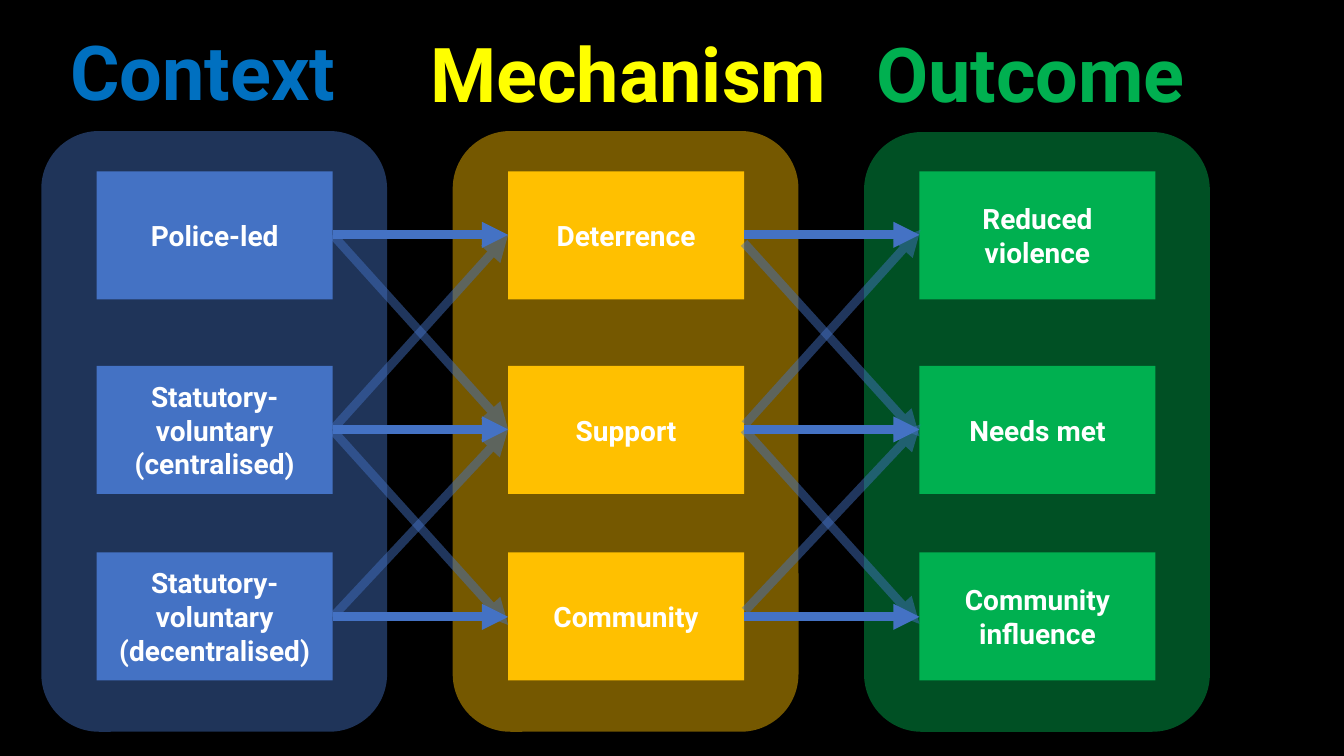
from lxml.etree import SubElement
from pptx import Presentation
from pptx.dml.color import RGBColor
from pptx.enum.shapes import MSO_CONNECTOR, MSO_SHAPE
from pptx.enum.text import MSO_ANCHOR, MSO_AUTO_SIZE, PP_ALIGN
from pptx.oxml.ns import qn
from pptx.util import Inches, Pt

COLOURS = {
    "background": "000000",
    "blue": "4472C4",
    "amber": "FFC000",
    "green": "00B050",
    "heading blue": "0070C0",
    "heading yellow": "FFFF00",
    "white": "FFFFFF",
}


class DiagramPage:
    font = "Roboto"
    line_width = Pt(6.25)

    def __init__(self, deck):
        self.page = deck.slides.add_slide(deck.slide_layouts[6])
        self.paint(self.page.background.fill, "background")

    def paint(self, fill, colour, opacity=100):
        fill.solid()
        fill.fore_color.rgb = RGBColor.from_string(COLOURS[colour])
        if opacity < 100:
            solid = fill._xPr.find(qn("a:solidFill"))
            SubElement(solid[0], qn("a:alpha"), val=str(opacity * 1000))

    def add_span(self, paragraph, text, size, colour):
        span = paragraph.add_run()
        span.text = text
        span.font.name = self.font
        span.font.size = Pt(size)
        span.font.bold = True
        span.font.color.rgb = RGBColor.from_string(COLOURS[colour])

    def shape(self, kind, left, top, width, height, colour, opacity=100):
        shape = self.page.shapes.add_shape(
            kind, Inches(left), Inches(top), Inches(width), Inches(height))
        shape.shadow.inherit = False
        shape.line.fill.background()
        self.paint(shape.fill, colour, opacity)
        return shape

    def panel(self, left, top, width, height, colour):
        self.shape(MSO_SHAPE.ROUNDED_RECTANGLE, left, top, width, height, colour, 46)

    def box(self, left, top, width, height, colour, text):
        frame = self.shape(MSO_SHAPE.RECTANGLE, left, top, width, height, colour).text_frame
        frame.word_wrap = True
        frame.vertical_anchor = MSO_ANCHOR.MIDDLE
        frame.paragraphs[0].alignment = PP_ALIGN.CENTER
        self.add_span(frame.paragraphs[0], text, 20, "white")

    def arrow(self, start, end, opacity=100):
        arrow = self.page.shapes.add_connector(
            MSO_CONNECTOR.STRAIGHT, *map(Inches, start + end))
        arrow.line.width = self.line_width
        self.paint(arrow.line.fill, "blue", opacity)
        SubElement(arrow.line._get_or_add_ln(), qn("a:tailEnd"), type="triangle")
        SubElement(arrow._element.spPr, qn("a:effectLst"))

    def heading(self, left, top, width, text, colour):
        box = self.page.shapes.add_textbox(
            Inches(left), Inches(top), Inches(width), Inches(1.01))
        box.text_frame.word_wrap = False
        box.text_frame.auto_size = MSO_AUTO_SIZE.SHAPE_TO_FIT_TEXT
        self.add_span(box.text_frame.paragraphs[0], text, 54, colour)


# Grid: three columns of three boxes
BOX_WIDTH, BOX_HEIGHT = 2.34, 1.27
COLUMN_LEFTS = [0.96 + 4.08 * column for column in range(3)]
ROW_TOPS = [1.7, 3.63, 5.48]
ROW_MIDDLES = [2.33, 4.26, 6.12]
PANEL_MARGIN = 0.55

# Box colour, labels, panel top and height, heading
COLUMNS = [
    ("blue", ["Police-led", "Statutory-voluntary (centralised)",
              "Statutory-voluntary (decentralised)"],
     (1.3, 5.96), (0.6, 0.2, 2.93, "Context", "heading blue")),
    ("amber", ["Deterrence", "Support", "Community"],
     (1.3, 5.96), (4.17, 0.22, 4.22, "Mechanism", "heading yellow")),
    ("green", ["Reduced violence", "Needs met", "Community influence"],
     (1.31, 5.95), (8.59, 0.22, 3.41, "Outcome", "green")),
]

# Faint arrows: gap between columns, shift right, start and end height
DIAGONALS = [
    (0, 0, 2.33, 4.26),
    (1, 0, 2.41, 4.33),
    (0, 0, 4.27, 6.2),
    (1, 0, 4.26, 6.19),
    (0, 0, 4.26, 2.33),
    (0, 0, 6.12, 4.26),
    (1, 0.01, 4.21, 2.28),
    (1, 0.01, 6.06, 4.21),
]


def main():
    deck = Presentation()
    deck.slide_width, deck.slide_height = Inches(13.33), Inches(7.5)
    diagram = DiagramPage(deck)

    # Panels
    for left, (colour, _, (top, height), _) in zip(COLUMN_LEFTS, COLUMNS):
        diagram.panel(left - PANEL_MARGIN, top, 3.43, height, colour)

    # Boxes
    for left, (colour, labels, _, _) in zip(COLUMN_LEFTS, COLUMNS):
        for top, label in zip(ROW_TOPS, labels):
            diagram.box(left, top, BOX_WIDTH, BOX_HEIGHT, colour, label)

    # Arrows along the rows, then across them
    gaps = [(left + BOX_WIDTH, following)
            for left, following in zip(COLUMN_LEFTS, COLUMN_LEFTS[1:])]
    for start, end in gaps:
        for middle in ROW_MIDDLES:
            diagram.arrow((start, middle), (end, middle))
    for gap, shift, start_height, end_height in DIAGONALS:
        start, end = gaps[gap]
        diagram.arrow((start + shift, start_height), (end + shift, end_height), 47)

    # Headings
    for *_, heading in COLUMNS:
        diagram.heading(*heading)

    deck.save("out.pptx")


if __name__ == "__main__":
    main()
